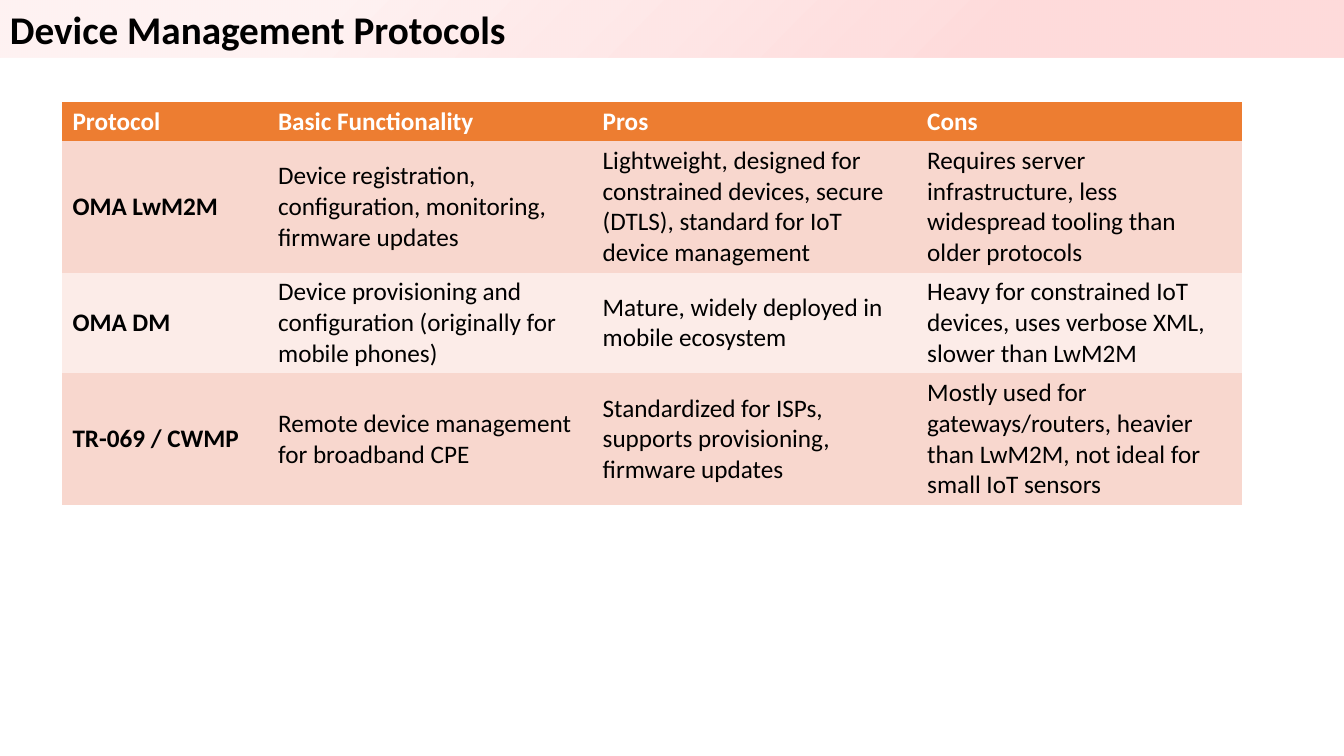
from dataclasses import dataclass

from pptx import Presentation
from pptx import oxml
from pptx.dml.color import RGBColor
from pptx.enum import shapes, text
from pptx.oxml import ns
from pptx.util import Pt


@dataclass(frozen=True)
class Theme:
    font: str = "Calibri"
    title_size: float = 28
    table_size: float = 18
    ink: str = "000000"
    header_ink: str = "FFFFFF"
    header_fill: str = "ED7D31"
    bands: tuple = ("F8D7CE", "FCECE8")
    glow: str = "FF0000"
    glow_stops: tuple = ((26, 14), (76, 5))  # position %, opacity %


THEME = Theme()
SLIDE_WIDTH, SLIDE_HEIGHT = 960, 540
TITLE_BOX = (0, 0, SLIDE_WIDTH, 41.4)
TABLE_BOX = (44.6, 72.7, 842.4, 288)
PROTOCOL_WIDTH = 146.9
ROW_HEIGHTS = (28, 94, 72, 94)
NO_GRID_STYLE = "{2D5ABB26-0587-4C30-8999-92F81FD0307C}"

PROTOCOLS = [
    ("Protocol", "Basic Functionality", "Pros", "Cons"),
    ("OMA LwM2M",
     "Device registration, configuration, monitoring, firmware updates",
     "Lightweight, designed for constrained devices, secure (DTLS), "
     "standard for IoT device management",
     "Requires server infrastructure, less widespread tooling than older protocols"),
    ("OMA DM",
     "Device provisioning and configuration (originally for mobile phones)",
     "Mature, widely deployed in mobile ecosystem",
     "Heavy for constrained IoT devices, uses verbose XML, slower than LwM2M"),
    ("TR-069 / CWMP",
     "Remote device management for broadband CPE",
     "Standardized for ISPs, supports provisioning, firmware updates",
     "Mostly used for gateways/routers, heavier than LwM2M, "
     "not ideal for small IoT sensors"),
]


def apply(target, formats):
    for attribute, value in formats.items():
        setattr(target, attribute, value)


def write(frame, words, size, color, bold):
    paragraph = frame.paragraphs[0]
    paragraph.alignment = text.PP_ALIGN.LEFT
    run = paragraph.add_run()
    run.text = words
    apply(run.font, {"name": THEME.font, "size": Pt(size), "bold": bold})
    run.font.color.rgb = RGBColor.from_string(color)


def fill_with_glow(bar):
    """Fill the bar with a translucent glow that spreads from its lower right corner."""
    stops = "".join(
        f'<a:gs pos="{position * 1000}"><a:srgbClr val="{THEME.glow}">'
        f'<a:alpha val="{opacity * 1000}"/></a:srgbClr></a:gs>'
        for position, opacity in THEME.glow_stops)
    glow = oxml.parse_xml(
        f'<a:gradFill {ns.nsdecls("a")} rotWithShape="1"><a:gsLst>{stops}</a:gsLst>'
        '<a:path path="circle"><a:fillToRect l="100000" t="100000"/></a:path>'
        '</a:gradFill>')
    bar.fill.background()
    properties = bar._element.spPr
    properties.replace(properties.find(ns.qn("a:noFill")), glow)


def add_title_bar(slide, box, title):
    bar = slide.shapes.add_shape(shapes.MSO_SHAPE.RECTANGLE, *map(Pt, box))
    bar.shadow.inherit = False
    bar.line.fill.background()
    fill_with_glow(bar)
    apply(bar.text_frame, {
        "word_wrap": True,
        "auto_size": text.MSO_AUTO_SIZE.SHAPE_TO_FIT_TEXT,
        "vertical_anchor": text.MSO_ANCHOR.TOP,
    })
    write(bar.text_frame, title, THEME.title_size, THEME.ink, True)


def add_protocol_table(slide, box, rows):
    width = box[2]
    table_frame = slide.shapes.add_table(len(rows), len(rows[0]), *map(Pt, box))
    table = table_frame.table
    apply(table, {"first_row": True, "horz_banding": False})
    table._tbl.tblPr.find(ns.qn("a:tableStyleId")).text = NO_GRID_STYLE

    detail_width = (width - PROTOCOL_WIDTH) / (len(rows[0]) - 1)
    for index, column in enumerate(table.columns):
        column.width = Pt(detail_width if index else PROTOCOL_WIDTH)

    for row_index, (row, height) in enumerate(zip(rows, ROW_HEIGHTS)):
        table.rows[row_index].height = Pt(height)
        is_header = row_index == 0
        fill = THEME.header_fill if is_header else THEME.bands[(row_index - 1) % 2]
        ink = THEME.header_ink if is_header else THEME.ink
        for column_index, words in enumerate(row):
            cell = table.cell(row_index, column_index)
            apply(cell, {
                "vertical_anchor": text.MSO_ANCHOR.MIDDLE,
                "margin_top": Pt(3),
                "margin_bottom": Pt(3),
            })
            cell.fill.solid()
            cell.fill.fore_color.rgb = RGBColor.from_string(fill)
            write(cell.text_frame, words, THEME.table_size, ink,
                  is_header or column_index == 0)


def main():
    deck = Presentation()
    apply(deck, {"slide_width": Pt(SLIDE_WIDTH), "slide_height": Pt(SLIDE_HEIGHT)})
    slide = deck.slides.add_slide(deck.slide_layouts[6])
    add_title_bar(slide, TITLE_BOX, "Device Management Protocols")
    add_protocol_table(slide, TABLE_BOX, PROTOCOLS)
    deck.save("out.pptx")


if __name__ == "__main__":
    main()
